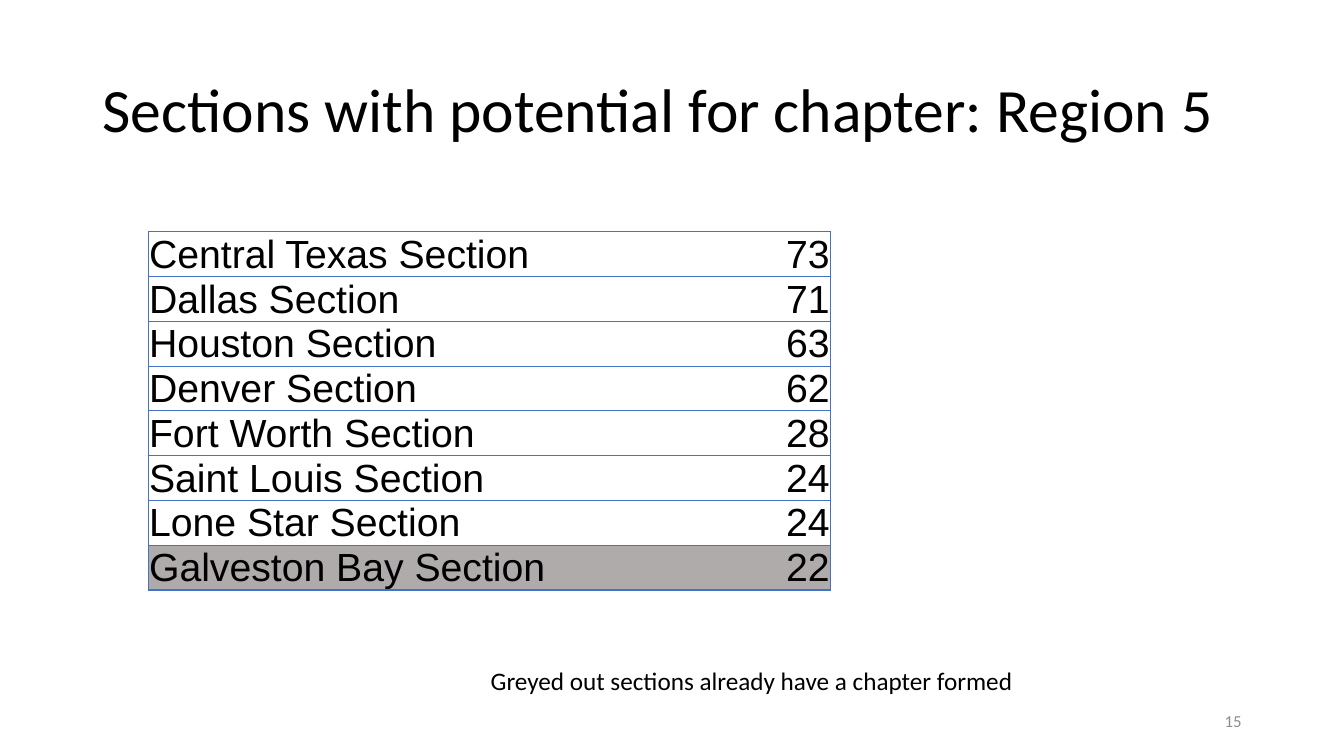
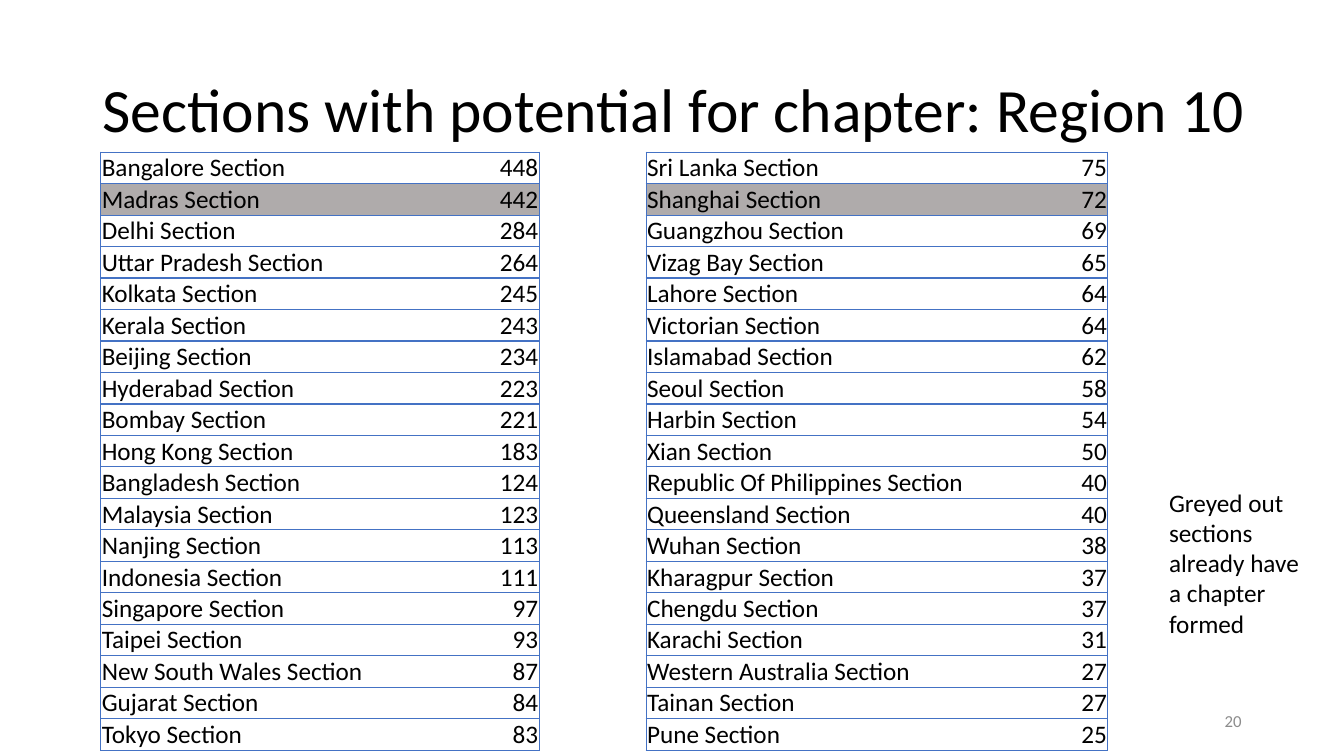
import dataclasses

import lxml.etree
import pptx
import pptx.dml.color
import pptx.enum.text
import pptx.oxml.ns
import pptx.util

Pt = pptx.util.Pt
ALIGN = pptx.enum.text.PP_ALIGN
ANCHOR = pptx.enum.text.MSO_ANCHOR


@dataclasses.dataclass(frozen=True)
class Theme:
    text: str = "000000"
    page_number: str = "8C8C8C"
    open_section: str = "FFFFFF"
    formed_section: str = "AFABAB"
    rule: str = "4472C4"
    font: str = "Calibri"
    title_size: int = 44
    note_size: int = 18
    number_size: int = 12
    rule_width: int = 1
    cell_inset: float = 0.72


THEME = Theme()
NOTE = "Greyed out sections already have a chapter formed"
FORMED = {"Galveston Bay", "Madras", "Shanghai"}

REGION_5 = [
    ("Central Texas", 73), ("Dallas", 71), ("Houston", 63), ("Denver", 62),
    ("Fort Worth", 28), ("Saint Louis", 24), ("Lone Star", 24),
    ("Galveston Bay", 22),
]
REGION_10_LARGER = [
    ("Bangalore", 448), ("Madras", 442), ("Delhi", 284),
    ("Uttar Pradesh", 264), ("Kolkata", 245), ("Kerala", 243),
    ("Beijing", 234), ("Hyderabad", 223), ("Bombay", 221),
    ("Hong Kong", 183), ("Bangladesh", 124), ("Malaysia", 123),
    ("Nanjing", 113), ("Indonesia", 111), ("Singapore", 97),
    ("Taipei", 93), ("New South Wales", 87), ("Gujarat", 84), ("Tokyo", 83),
]
REGION_10_SMALLER = [
    ("Sri Lanka", 75), ("Shanghai", 72), ("Guangzhou", 69),
    ("Vizag Bay", 65), ("Lahore", 64), ("Victorian", 64),
    ("Islamabad", 62), ("Seoul", 58), ("Harbin", 54), ("Xian", 50),
    ("Republic Of Philippines", 40), ("Queensland", 40), ("Wuhan", 38),
    ("Kharagpur", 37), ("Chengdu", 37), ("Karachi", 31),
    ("Western Australia", 27), ("Tainan", 27), ("Pune", 25),
]

# Each table: sections, left, top, column widths, row height, font, size.
# Boxes are left, top, width, height.
REGIONS = [
    {
        "region": 5, "page": 15, "note_box": (343.4, 471.6, 426.2, 29),
        "tables": [
            (REGION_5, 105.8, 165.6, (418.3, 69.2), 32, "Arial", 28),
        ],
    },
    {
        "region": 10, "page": 20, "note_box": (828, 344.2, 111.6, 116.6),
        "tables": [
            (REGION_10_LARGER, 72, 108.7, (268.6, 44.6), 22.5, THEME.font, 18),
            (REGION_10_SMALLER, 461.5, 108.7, (283, 46.8), 22.5, THEME.font, 18),
        ],
    },
]


def write(frame, text, size, color=THEME.text, font=THEME.font, align=ALIGN.LEFT):
    frame.text = text
    paragraph = frame.paragraphs[0]
    paragraph.alignment = align
    paragraph.font.name = font
    paragraph.font.size = Pt(size)
    paragraph.font.color.rgb = pptx.dml.color.RGBColor.from_string(color)
    return paragraph


def rule_cell(cell, ruled_sides):
    """Draw the named sides (L, R, T, B) and clear the others; call before filling."""
    properties = cell._tc.get_or_add_tcPr()
    qn = pptx.oxml.ns.qn
    for side in "LRTB":
        line = lxml.etree.SubElement(properties, qn(f"a:ln{side}"),
                                     w=str(Pt(THEME.rule_width)))
        if side in ruled_sides:
            fill = lxml.etree.SubElement(line, qn("a:solidFill"))
            lxml.etree.SubElement(fill, qn("a:srgbClr"), val=THEME.rule)
        else:
            lxml.etree.SubElement(line, qn("a:noFill"))


deck = pptx.Presentation()
deck.slide_width = Pt(960)
deck.slide_height = Pt(540)
title_only = deck.slide_layouts[5]

for region in REGIONS:
    slide = deck.slides.add_slide(title_only)

    # Wide enough to keep a two-digit region number on the first line.
    title = slide.shapes.title
    title.left, title.top, title.width, title.height = map(Pt, (66, 53.3, 850, 79.2))
    title.text_frame.vertical_anchor = ANCHOR.TOP
    title.text_frame.auto_size = pptx.enum.text.MSO_AUTO_SIZE.NONE
    heading = write(title.text_frame,
                    f"Sections with potential for chapter: Region {region['region']}",
                    THEME.title_size)
    heading.line_spacing = 0.9

    page_number = slide.shapes.add_textbox(*map(Pt, (678, 500.5, 216, 28.8))).text_frame
    page_number.word_wrap = True
    page_number.vertical_anchor = ANCHOR.MIDDLE
    write(page_number, str(region["page"]), THEME.number_size,
          THEME.page_number, align=ALIGN.RIGHT)

    for sections, left, top, widths, row_height, font, size in region["tables"]:
        table = slide.shapes.add_table(
            len(sections), len(widths), Pt(left), Pt(top),
            Pt(sum(widths)), Pt(row_height * len(sections))).table
        table.first_row = False
        table.horz_banding = False
        for column, width in zip(table.columns, widths):
            column.width = Pt(width)
        for row, (section, members) in zip(table.rows, sections):
            row.height = Pt(row_height)
            shade = THEME.formed_section if section in FORMED else THEME.open_section
            entries = [(f"{section} Section", ALIGN.LEFT, "LTB"),
                       (str(members), ALIGN.RIGHT, "RTB")]
            for cell, (entry, align, ruled_sides) in zip(row.cells, entries):
                cell.margin_left = cell.margin_right = Pt(THEME.cell_inset)
                cell.margin_top = Pt(THEME.cell_inset)
                cell.margin_bottom = 0
                cell.vertical_anchor = ANCHOR.BOTTOM
                rule_cell(cell, ruled_sides)
                cell.fill.solid()
                cell.fill.fore_color.rgb = pptx.dml.color.RGBColor.from_string(shade)
                label = write(cell.text_frame, entry, size, font=font, align=align)
                # A fixed line height keeps the text from stretching its row.
                label.line_spacing = Pt(row_height - 1)

    note = slide.shapes.add_textbox(*map(Pt, region["note_box"])).text_frame
    note.word_wrap = True
    write(note, NOTE, THEME.note_size)

deck.save("out.pptx")
